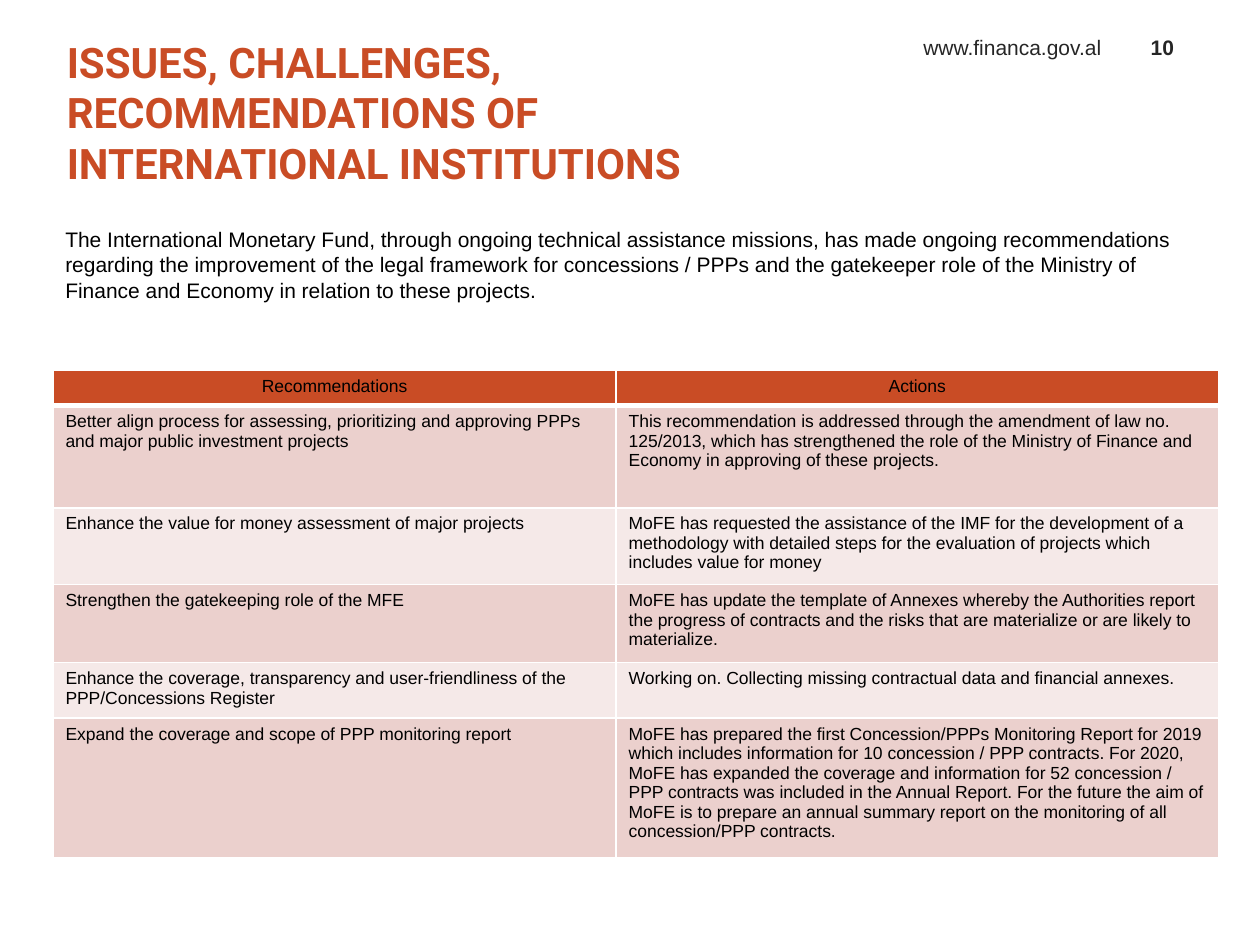
import dataclasses

import pptx
import pptx.dml.color
import pptx.enum.text
import pptx.oxml
import pptx.oxml.ns
import pptx.util

ALIGN = pptx.enum.text.PP_ALIGN
ANCHOR = pptx.enum.text.MSO_ANCHOR
INCH = pptx.util.Inches


@dataclasses.dataclass(frozen=True)
class Theme:
    accent: str = "C94C25"
    band_dark: str = "EBD0CD"
    band_light: str = "F5E9E8"
    border: str = "FFFFFF"
    text: str = "000000"
    muted: str = "262626"
    heading_font: str = "Roboto"
    body_font: str = "Arial"
    title_size: int = 24
    body_size: int = 12
    table_size: int = 10


THEME = Theme()
WIDTH, HEIGHT = 10, 7.5
MARGIN = 0.42
COLUMN_WIDTHS = (4.47, 4.78)
ROW_HEIGHTS = (0.28, 0.81, 0.61, 0.62, 0.44, 1.11)

TITLE = "ISSUES, CHALLENGES, RECOMMENDATIONS OF INTERNATIONAL INSTITUTIONS"
INTRODUCTION = (
    "The International Monetary Fund, through ongoing technical assistance missions, "
    "has made ongoing recommendations regarding the improvement of the legal framework "
    "for concessions / PPPs and the gatekeeper role of the Ministry of Finance and "
    "Economy in relation to these projects."
)
TABLE_ROWS = (
    ("Recommendations", "Actions"),
    (
        "Better align process for assessing, prioritizing and approving PPPs and major "
        "public investment projects",
        "This recommendation is addressed through the amendment of law no. 125/2013, "
        "which has strengthened the role of the Ministry of Finance and Economy in "
        "approving of these projects.",
    ),
    (
        "Enhance the value for money assessment of major projects",
        "MoFE has requested the assistance of the IMF for the development of a "
        "methodology with detailed steps for the evaluation of projects which includes "
        "value for money",
    ),
    (
        "Strengthen the gatekeeping role of the MFE",
        "MoFE has update the template of Annexes whereby the Authorities report the "
        "progress of contracts and the risks that are materialize or are likely to "
        "materialize.",
    ),
    (
        "Enhance the coverage, transparency and user-friendliness of the "
        "PPP/Concessions Register",
        "Working on. Collecting missing contractual data and financial annexes.",
    ),
    (
        "Expand the coverage and scope of PPP monitoring report",
        "MoFE has prepared the first Concession/PPPs Monitoring Report for 2019 which "
        "includes information for 10 concession / PPP contracts. For 2020, MoFE has "
        "expanded the coverage and information for 52 concession / PPP contracts was "
        "included in the Annual Report. For the future the aim of MoFE is to prepare an "
        "annual summary report on the monitoring of all concession/PPP contracts.",
    ),
)


def color(value):
    return pptx.dml.color.RGBColor.from_string(value)


def add_run(paragraph, text, size, value, font=THEME.body_font, bold=False):
    run = paragraph.add_run()
    run.text = text
    run.font.name = font
    run.font.size = pptx.util.Pt(size)
    run.font.bold = bold
    run.font.color.rgb = color(value)


def format_title(slide):
    title = slide.shapes.title
    title.left, title.top, title.width, title.height = map(
        INCH, (0.33, 0.03, 5.58, 1.72)
    )
    frame = title.text_frame
    frame.margin_left = frame.margin_right = 0
    frame.vertical_anchor = ANCHOR.MIDDLE
    frame.auto_size = pptx.enum.text.MSO_AUTO_SIZE.NONE
    paragraph = frame.paragraphs[0]
    paragraph.alignment = ALIGN.LEFT
    properties = paragraph._p.get_or_add_pPr()
    properties.set("marL", str(INCH(0.2)))
    properties.set("indent", "0")
    add_run(paragraph, TITLE, THEME.title_size, THEME.accent, THEME.heading_font, True)


def add_text(slide, box, text, value, alignment=ALIGN.LEFT, anchor=ANCHOR.TOP, bold=False):
    frame = slide.shapes.add_textbox(*map(INCH, box)).text_frame
    frame.word_wrap = True
    frame.vertical_anchor = anchor
    paragraph = frame.paragraphs[0]
    paragraph.alignment = alignment
    add_run(paragraph, text, THEME.body_size, value, bold=bold)


def set_borders(cell, bottom_width):
    """Draw all four cell edges; only the bottom one varies in width."""
    properties = cell._tc.get_or_add_tcPr()
    widths = {"lnL": 1, "lnR": 1, "lnT": 1, "lnB": bottom_width}
    for position, (edge, width) in enumerate(widths.items()):
        line = pptx.oxml.parse_xml(
            f'<a:{edge} {pptx.oxml.ns.nsdecls("a")} w="{pptx.util.Pt(width)}">'
            f'<a:solidFill><a:srgbClr val="{THEME.border}"/></a:solidFill></a:{edge}>'
        )
        properties.insert(position, line)


def add_table(slide):
    frame = slide.shapes.add_table(
        len(ROW_HEIGHTS), len(COLUMN_WIDTHS), INCH(MARGIN), INCH(2.94),
        INCH(sum(COLUMN_WIDTHS)), INCH(sum(ROW_HEIGHTS)),
    )
    table = frame.table
    for column, width in zip(table.columns, COLUMN_WIDTHS):
        column.width = INCH(width)
    for index, (row, height) in enumerate(zip(table.rows, ROW_HEIGHTS)):
        row.height = INCH(height)
        is_header = index == 0
        band = THEME.band_dark if index % 2 else THEME.band_light
        for cell, text in zip(row.cells, TABLE_ROWS[index]):
            cell.fill.solid()
            cell.fill.fore_color.rgb = color(THEME.accent if is_header else band)
            set_borders(cell, 3 if is_header else 1)
            paragraph = cell.text_frame.paragraphs[0]
            paragraph.alignment = ALIGN.CENTER if is_header else ALIGN.LEFT
            add_run(paragraph, text, THEME.table_size, THEME.text)


def main():
    presentation = pptx.Presentation()
    presentation.slide_width, presentation.slide_height = INCH(WIDTH), INCH(HEIGHT)
    slide = presentation.slides.add_slide(
        presentation.slide_layouts.get_by_name("Title Only")
    )
    format_title(slide)
    add_text(slide, (6.42, 0.19, 2.42, 0.33), "www.financa.gov.al", THEME.muted,
             ALIGN.RIGHT, ANCHOR.BOTTOM)
    add_text(slide, (8.95, 0.19, 0.55, 0.33), "10", THEME.muted,
             ALIGN.CENTER, ANCHOR.BOTTOM, bold=True)
    add_table(slide)
    add_text(slide, (MARGIN, 1.75, WIDTH - 2 * MARGIN, 0.71), INTRODUCTION, THEME.text)
    presentation.save("out.pptx")


if __name__ == "__main__":
    main()
